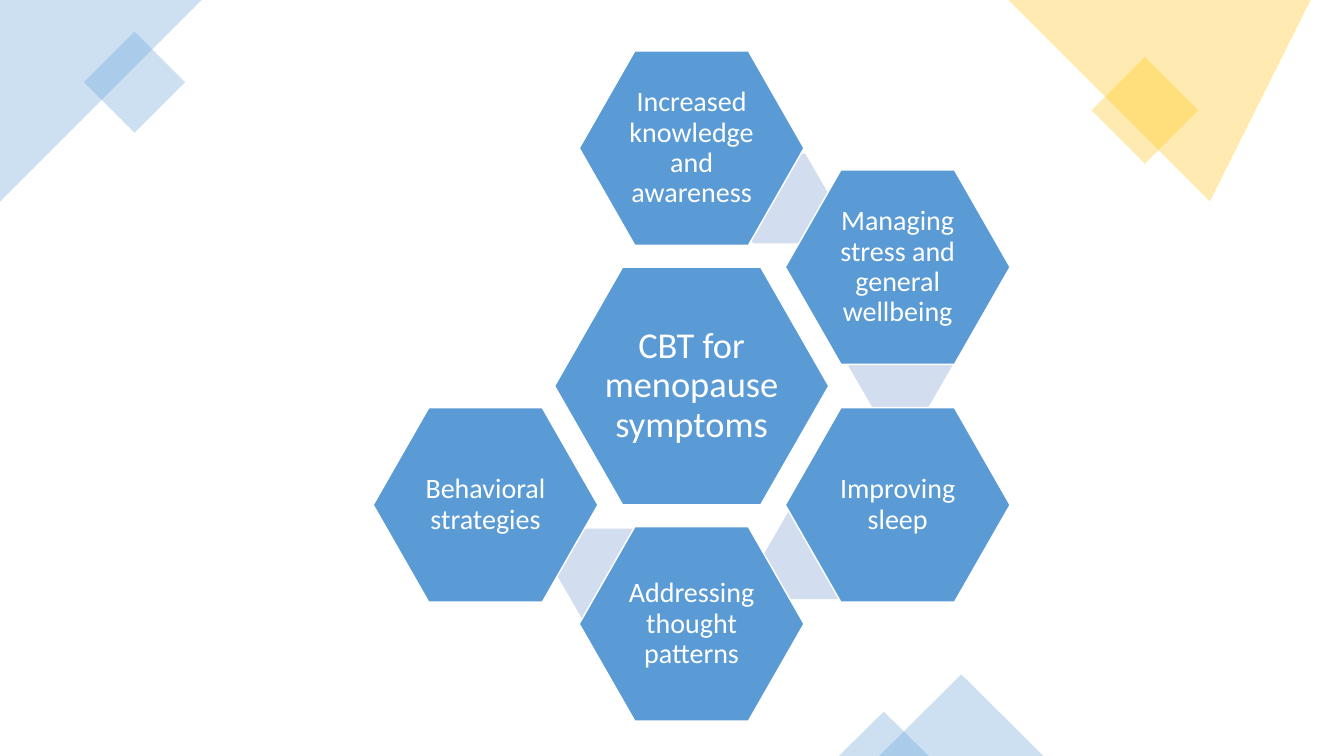
import math

import pptx
import pptx.dml.color
import pptx.enum.shapes
import pptx.enum.text
import pptx.util
from lxml import etree

Inches = pptx.util.Inches
Pt = pptx.util.Pt
Shape = pptx.enum.shapes.MSO_SHAPE

# Content
BLUE, PALE_BLUE, YELLOW, WHITE = "5B9BD5", "D2DEEF", "FFC000", "FFFFFF"
FONT = "Calibri"
TOPIC = "CBT for menopause symptoms"
# Strategy, angle around the topic, centre of the link to the next strategy
STRATEGIES = [
    ("Increased knowledge and awareness", -90, (7.73, 1.97)),
    ("Managing stress and general wellbeing", -30, (8.93, 3.63)),
    ("Improving sleep", 30, (8.09, 5.5)),
    ("Addressing thought patterns", 90, (6.03, 5.69)),
    ("Behavioral strategies", 150, None),
]

# Corner decoration, back to front
BLUE_CORNER = [(1.53, 0), (0, 0), (0, 1.3), (0.41, 1.71), (1.83, 0.3)]
YELLOW_CORNER = [(13.33, 0), (10.23, 0), (11.93, 1.62), (13.33, 0.28)]
DIAMONDS = [(0.98, 0.46, 0.71, BLUE), (10.98, 0.72, 0.75, YELLOW)]
TRIANGLES = [(8.72, 6.69, 1.63, 0.81), (8.32, 7.06, 0.89, 0.44)]

# Hexagon flower
CENTRE = (6.86, 3.83)
RADIUS = 2.36
TOPIC_SIZE, STRATEGY_SIZE, LINK_SIZE = (2.72, 2.36), (2.23, 1.93), (1.03, 0.89)


def colour(hex_string):
    return pptx.dml.color.RGBColor.from_string(hex_string)


def paint(shape, fill, opacity=None):
    shape.shadow.inherit = False
    shape.fill.solid()
    shape.fill.fore_color.rgb = colour(fill)
    shape.line.fill.background()
    if opacity is not None:
        tint = shape.fill._xPr.find(".//" + pptx.oxml.ns.qn("a:srgbClr"))
        alpha = etree.SubElement(tint, pptx.oxml.ns.qn("a:alpha"))
        alpha.set("val", str(opacity * 1000))


def add_corner(points, fill):
    builder = page.shapes.build_freeform(*points[0], scale=Inches(1))
    builder.add_line_segments(points[1:], close=True)
    paint(builder.convert_to_shape(), fill, 30)


def add_hexagon(centre, size, fill, slant):
    left, top = (middle - length / 2 for middle, length in zip(centre, size))
    hexagon = flower.shapes.add_shape(
        Shape.HEXAGON, Inches(left), Inches(top), *map(Inches, size))
    hexagon.adjustments[0] = slant
    paint(hexagon, fill)
    return hexagon


def add_label_hexagon(text, centre, size, points, inset):
    hexagon = add_hexagon(centre, size, BLUE, 0.286)
    hexagon.line.color.rgb = colour(WHITE)
    hexagon.line.width = Pt(1)
    frame = hexagon.text_frame
    frame.text = text
    frame.word_wrap = True
    frame.vertical_anchor = pptx.enum.text.MSO_ANCHOR.MIDDLE
    frame.margin_left = frame.margin_right = Inches(inset)
    frame.margin_top = frame.margin_bottom = Inches(inset)
    para = frame.paragraphs[0]
    para.alignment = pptx.enum.text.PP_ALIGN.CENTER
    para.line_spacing = 0.9
    font = para.runs[0].font
    font.name, font.size = FONT, Pt(points)
    font.color.rgb = colour(WHITE)


deck = pptx.Presentation()
deck.slide_width, deck.slide_height = Inches(13.33), Inches(7.5)
page = deck.slides.add_slide(deck.slide_layouts[6])

# Decoration
add_corner(BLUE_CORNER, BLUE)
for left, top, side, fill in DIAMONDS:
    diamond = page.shapes.add_shape(
        Shape.RECTANGLE, Inches(left), Inches(top), Inches(side), Inches(side))
    diamond.rotation = 315
    paint(diamond, fill, 30)
add_corner(YELLOW_CORNER, YELLOW)
for bounds in TRIANGLES:
    triangle = page.shapes.add_shape(
        Shape.ISOSCELES_TRIANGLE, *map(Inches, bounds))
    paint(triangle, BLUE, 30)

# Topic with its strategies, each link lying behind its strategy
flower = page.shapes.add_group_shape()
add_label_hexagon(TOPIC, CENTRE, TOPIC_SIZE, 26, 0.04)
for text, angle, link_centre in STRATEGIES:
    if link_centre:
        add_hexagon(link_centre, LINK_SIZE, PALE_BLUE, 0.289)
    turn = math.radians(angle)
    centre = (CENTRE[0] + RADIUS * math.cos(turn),
              CENTRE[1] + RADIUS * math.sin(turn))
    add_label_hexagon(text, centre, STRATEGY_SIZE, 20, 0.03)

deck.save("out.pptx")
